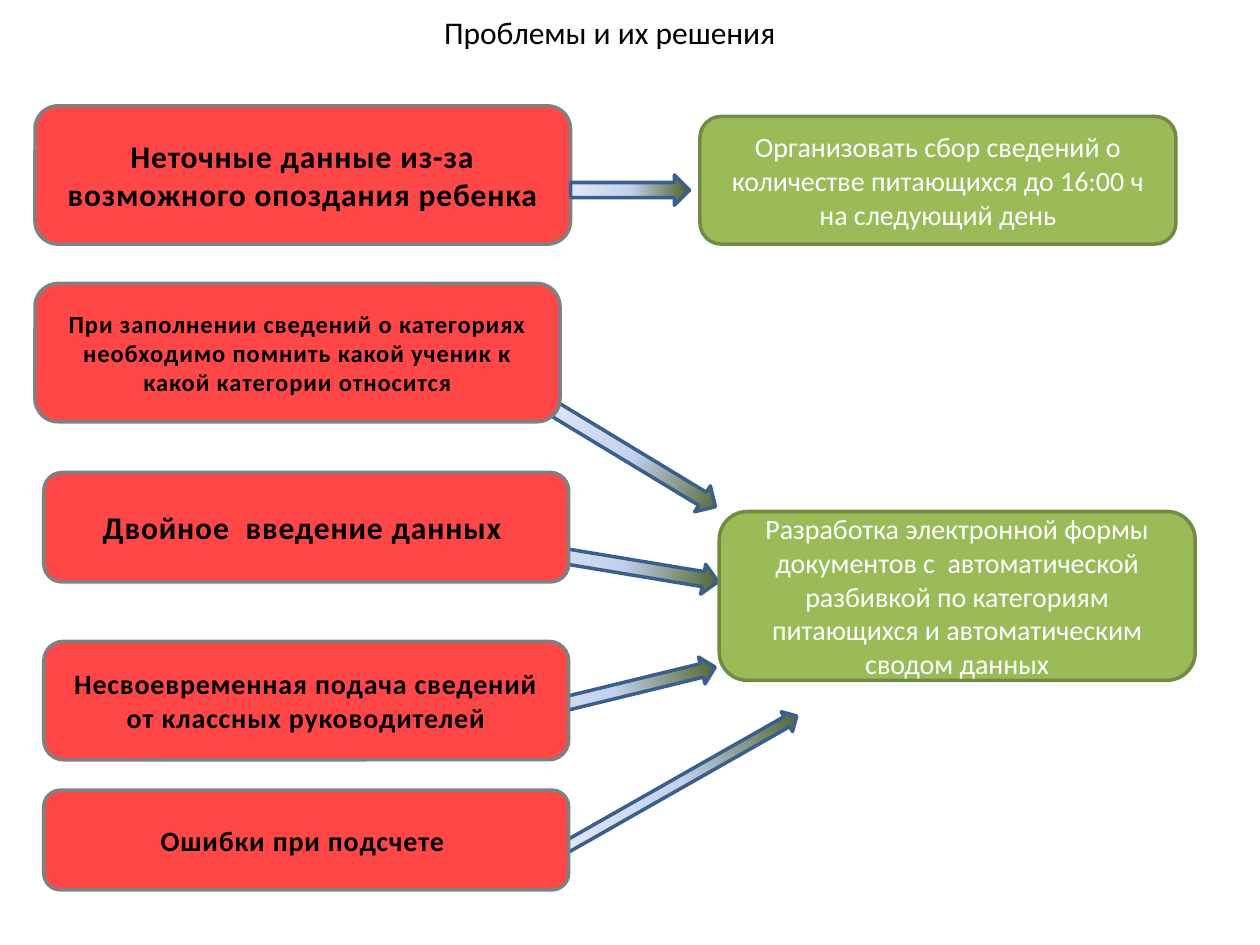
import pptx
import pptx.dml.color
import pptx.enum.shapes
import pptx.enum.text
import pptx.oxml
import pptx.util

Pt = pptx.util.Pt
SHAPES = pptx.enum.shapes.MSO_SHAPE
NAMESPACE = 'xmlns:a="http://schemas.openxmlformats.org/drawingml/2006/main"'
ARROW_STOPS = ((0, "4F6228"), (50, "C2D1ED"), (100, "E1E8F5"))
PROBLEM = {"fill": "FF4747", "line": "808080", "color": "000000", "bold": True}
SOLUTION = {"fill": "9BBB59", "line": "738A42", "color": "FFFFFF", "bold": False}


def color_of(value):
    """Turn a hex string into a colour."""
    return pptx.dml.color.RGBColor.from_string(value)


def assign(target, values):
    """Set each attribute named in a dict."""
    for name, value in values.items():
        setattr(target, name, value)


def write_text(shape, text, size, color, bold=False):
    """Write one centred paragraph and return its run."""
    assign(shape.text_frame, {
        "word_wrap": True,
        "vertical_anchor": pptx.enum.text.MSO_ANCHOR.MIDDLE,
    })
    para = shape.text_frame.paragraphs[0]
    para.alignment = pptx.enum.text.PP_ALIGN.CENTER
    span = para.add_run()
    span.text = text
    assign(span.font, {"name": "Calibri", "size": Pt(size), "bold": bold})
    span.font.color.rgb = color_of(color)
    return span


def add_outlined(page, kind, box, line):
    """Add a shape without shadow and with a 2 pt line."""
    shape = page.shapes.add_shape(kind, *map(Pt, box))
    shape.shadow.inherit = False
    shape.line.color.rgb = color_of(line)
    shape.line.width = Pt(2)
    return shape


def add_card(page, box, text, size, style):
    """Add a rounded card with text and return the run."""
    card = add_outlined(page, SHAPES.ROUNDED_RECTANGLE, box, style["line"])
    card.fill.solid()
    card.fill.fore_color.rgb = color_of(style["fill"])
    return write_text(card, text, size, style["color"], style["bold"])


def add_problem(page, box, text, size):
    """Add a red card whose letters are spaced and faintly outlined."""
    span = add_card(page, box, text, size, PROBLEM)
    properties = span.font._element
    properties.set("spc", "50")
    properties.insert(0, pptx.oxml.parse_xml(
        f'<a:ln {NAMESPACE} w="{Pt(1.06)}"><a:solidFill><a:srgbClr val="101A26">'
        '<a:alpha val="6000"/></a:srgbClr></a:solidFill></a:ln>'))


def add_arrow(page, box, rotation=0):
    """Add a block arrow that darkens towards its head."""
    arrow = add_outlined(page, SHAPES.RIGHT_ARROW, box, "3A5F8C")
    arrow.rotation = rotation
    arrow.fill.gradient()
    gradient = arrow._element.spPr.find(pptx.oxml.ns.qn("a:gradFill"))
    stops = "".join(
        f'<a:gs pos="{position * 1000}"><a:srgbClr val="{value}"/></a:gs>'
        for position, value in ARROW_STOPS)
    gradient.getparent().replace(gradient, pptx.oxml.parse_xml(
        f'<a:gradFill {NAMESPACE} rotWithShape="1"><a:gsLst>{stops}</a:gsLst>'
        '<a:lin ang="10800000" scaled="0"/></a:gradFill>'))


def draw_title(page, box):
    """Draw the heading."""
    title = page.shapes.add_textbox(*map(Pt, box))
    write_text(title, "Проблемы и их решения", 18, "000000")
    title.text_frame.auto_size = pptx.enum.text.MSO_AUTO_SIZE.SHAPE_TO_FIT_TEXT


def draw_single_pair(page, box):
    """Draw one problem with its own solution."""
    left, top, width, height = box
    add_problem(page, (left, top, 306, height),
                "Неточные данные из-за возможного опоздания ребенка", 18)
    add_card(page, (left + width - 272, top + 6, 272, height - 6),
             "Организовать сбор сведений о количестве питающихся "
             "до 16:00 ч на следующий день", 16, SOLUTION)
    add_arrow(page, (left + 306, top + 39.5, 68, 17.3))


def draw_shared_solution(page, box):
    """Draw four problems whose arrows lead to one solution."""
    left, top, width, height = box
    arrows = (
        (271.6, 225.4, 118.8, 15.8, 346.3),
        (279.5, 152.6, 111.6, 17.3, 9.4),
        (294, 278, 151.2, 13, 330.4),
        (285.3, 90, 111.6, 17.3, 31.2),
    )
    for x, y, length, thickness, rotation in arrows:
        add_arrow(page, (left + x, top + y, length, thickness), rotation)
    problems = (
        (0, 0, 79, 14, "При заполнении сведений о категориях необходимо помнить "
                       "какой ученик к какой категории относится"),
        (5, 108, 62.6, 18, "Двойное  введение данных "),
        (5, 204.5, 67.7, 16,
         "Несвоевременная подача сведений от классных руководителей"),
        (5, height - 57, 57, 16, "Ошибки при подсчете "),
    )
    for x, y, tall, size, text in problems:
        add_problem(page, (left + x, top + y, 300, tall), text, size)
    add_card(page, (left + width - 272, top + 130.3, 272, 96.5),
             "Разработка электронной формы документов с  автоматической разбивкой "
             "по категориям питающихся и автоматическим сводом данных", 16, SOLUTION)


def main():
    """Build and save the deck."""
    deck = pptx.Presentation()
    assign(deck, {"slide_width": Pt(720), "slide_height": Pt(540)})
    page = deck.slides.add_slide(deck.slide_layouts[6])
    draw_shared_solution(page, (20, 162, 663, 346.5))
    draw_single_pair(page, (20, 60.5, 652, 79))
    draw_title(page, (36.7, 3.6, 623.5, 29))
    deck.save("out.pptx")


if __name__ == "__main__":
    main()
